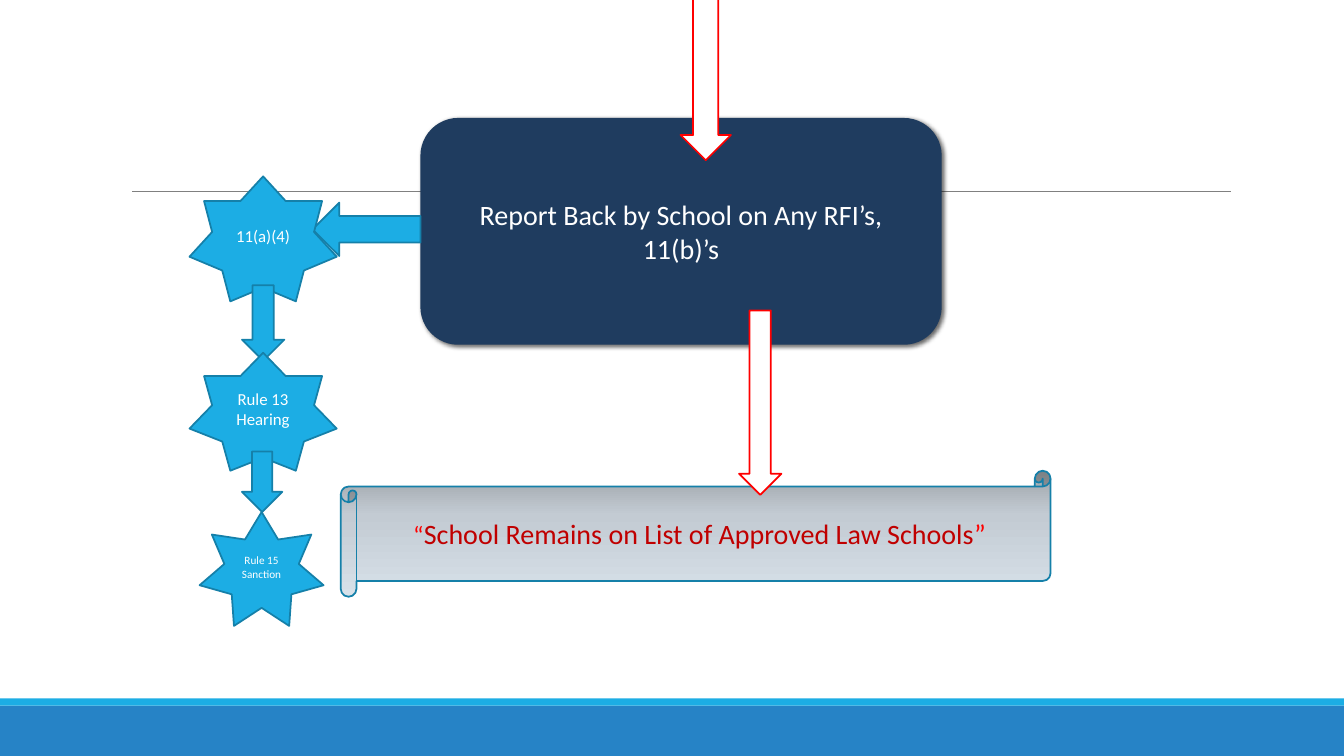
from lxml import etree
from pptx import Presentation
from pptx.dml.color import RGBColor
from pptx.enum.shapes import MSO_CONNECTOR, MSO_SHAPE
from pptx.enum.text import MSO_ANCHOR, PP_ALIGN
from pptx.oxml.ns import qn
from pptx.util import Inches, Pt

RECT = MSO_SHAPE.RECTANGLE
ROUND = MSO_SHAPE.ROUNDED_RECTANGLE
SCROLL = MSO_SHAPE.HORIZONTAL_SCROLL
STAR = MSO_SHAPE.STAR_7_POINT
DOWN = MSO_SHAPE.DOWN_ARROW
LEFT = MSO_SHAPE.LEFT_ARROW
LINE = MSO_CONNECTOR.STRAIGHT
CENTER = PP_ALIGN.CENTER
MIDDLE = MSO_ANCHOR.MIDDLE

WHITE = RGBColor(0xFF, 0xFF, 0xFF)
BLACK = RGBColor(0, 0, 0)
GRAY = RGBColor(0x80, 0x80, 0x80)
NAVY = RGBColor(0x1F, 0x3C, 0x5F)
BLUE = RGBColor(0x26, 0x83, 0xC6)
CYAN = RGBColor(0x1C, 0xAD, 0xE4)
TEAL = RGBColor(0x15, 0x80, 0xA9)
RED = RGBColor(0xFF, 0, 0)
DARK = RGBColor(0xC0, 0, 0)
SILVER = [(0, RGBColor(0xD7, 0xE1, 0xE9)), (65, RGBColor(0xC3, 0xCB, 0xD3)),
          (100, RGBColor(0x9D, 0xA3, 0xA8))]


def add(slide, kind, box, fill, edge=None):
    shape = slide.shapes.add_shape(kind, *map(Inches, box))
    shape.shadow.inherit = False
    shape.fill.solid()
    shape.fill.fore_color.rgb = fill
    if edge is None:
        shape.line.fill.background()
    else:
        shape.line.color.rgb = edge
        shape.line.width = Pt(1.25)
    return shape


def write(shape, lines, size, color=WHITE):
    """Center the lines; each line is a list of (text, color) or a string."""
    frame = shape.text_frame
    frame.word_wrap = True
    frame.vertical_anchor = MIDDLE
    for i, line in enumerate(lines):
        para = frame.add_paragraph() if i else frame.paragraphs[0]
        para.text = line
        para.alignment = CENTER
        para.font.name = "Calibri"
        para.font.size = Pt(size)
        para.font.color.rgb = color
    return frame


def tint(node, color):
    return etree.SubElement(node, qn("a:srgbClr"), val=str(color))


def cast(shape):
    """Drop a soft shadow to the lower right."""
    effects = shape._element.spPr.find(qn("a:effectLst"))
    outer = etree.SubElement(effects, qn("a:outerShdw"), blurRad=str(Pt(3.5)),
                             dist=str(Pt(2)), dir="2700000", rotWithShape="0")
    etree.SubElement(tint(outer, BLACK), qn("a:alpha"), val="60000")


def shade(shape, stops):
    """Fill from the bottom up with the given stops."""
    shape.fill.gradient()
    shape.fill.gradient_angle = 90
    parts = shape._element.spPr.find(qn("a:gradFill")).find(qn("a:gsLst"))
    for old in list(parts):
        parts.remove(old)
    for pos, color in stops:
        tint(etree.SubElement(parts, qn("a:gs"), pos=str(pos * 1000)), color)


def frame_page(slide, wide, high):
    # Footer bands
    add(slide, RECT, (0, high - 0.5, wide, 0.5), BLUE)
    add(slide, RECT, (0, high - 0.57, wide, 0.07), CYAN)
    # Rule under the title area
    rule = slide.shapes.add_connector(LINE, *map(Inches, (1.31, 1.9, 12.21, 1.9)))
    rule.line.color.rgb = GRAY
    rule.line.width = Pt(0.5)
    etree.SubElement(rule._element.spPr, qn("a:effectLst"))


def main_flow(slide, x, y):
    # Report box and the arrow into it
    card = add(slide, ROUND, (x, y, 5.17, 2.25), NAVY)
    cast(card)
    write(card, ["Report Back by School on Any RFI’s,\v11(b)’s"], 20)
    add(slide, DOWN, (x + 2.58, y - 1.25, 0.5, 1.67), WHITE, RED)

    # Outcome scroll and the arrow down to it
    scroll = add(slide, SCROLL, (x - 0.79, y + 3.5, 7.04, 1.25), WHITE, TEAL)
    shade(scroll, SILVER)
    para = write(scroll, [""], 20, RED).paragraphs[0]
    for text, color in (("“", RED),
                        ("School Remains on List of Approved Law Schools", DARK),
                        ("”", RED)):
        run = para.add_run()
        run.text = text
        run.font.color.rgb = color
    para.runs[0].font.size = Pt(18)
    add(slide, DOWN, (x + 3.16, y + 1.91, 0.42, 1.83), WHITE, RED)


def side_flow(slide, x, y):
    # Branch from the report box
    add(slide, LEFT, (x + 1.22, y + 0.26, 1.07, 0.53), CYAN, TEAL)
    # Stars, each with the arrow that leaves it
    steps = [
        ((0, 0, 1.46, 1.24), ["11(a)(4)"], 12, (0.52, 1.08, 0.42, 0.75)),
        ((0, 1.75, 1.46, 1.17), ["Rule 13", "Hearing"], 12, (0.52, 2.73, 0.4, 0.6)),
        ((0.1, 3.33, 1.23, 1.13), ["Rule 15", "Sanction"], 8, None),
    ]
    for (dx, dy, w, h), lines, size, arrow in steps:
        star = add(slide, STAR, (x + dx, y + dy, w, h), CYAN, TEAL)
        write(star, lines, size)
        if arrow:
            dx, dy, w, h = arrow
            add(slide, DOWN, (x + dx, y + dy, w, h), CYAN, TEAL)
        else:
            star.adjustments[0] = 0.3


def main():
    deck = Presentation()
    wide, high = 13.33, 7.5
    deck.slide_width, deck.slide_height = Inches(wide), Inches(high)
    slide = deck.slides.add_slide(deck.slide_layouts[6])
    frame_page(slide, wide, high)
    main_flow(slide, 4.17, 1.17)
    side_flow(slide, 1.88, 1.75)
    deck.save("out.pptx")


if __name__ == "__main__":
    main()
